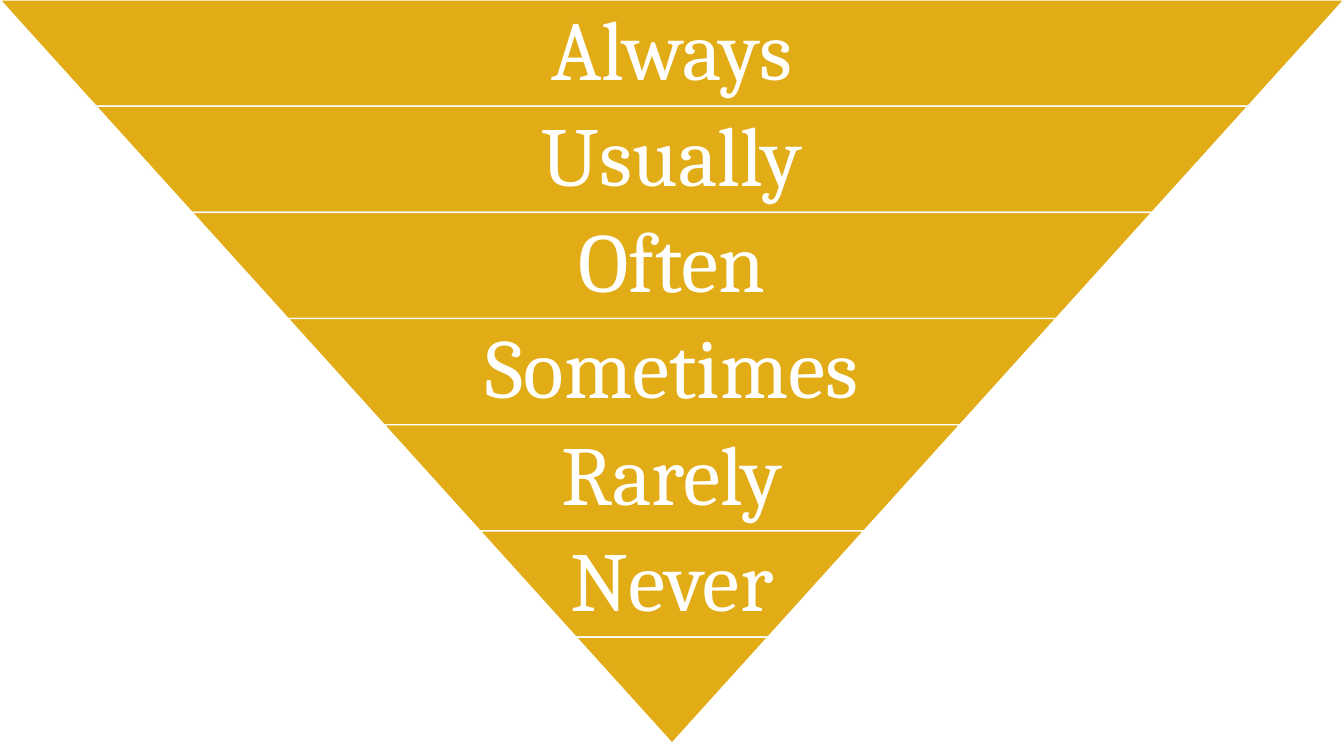
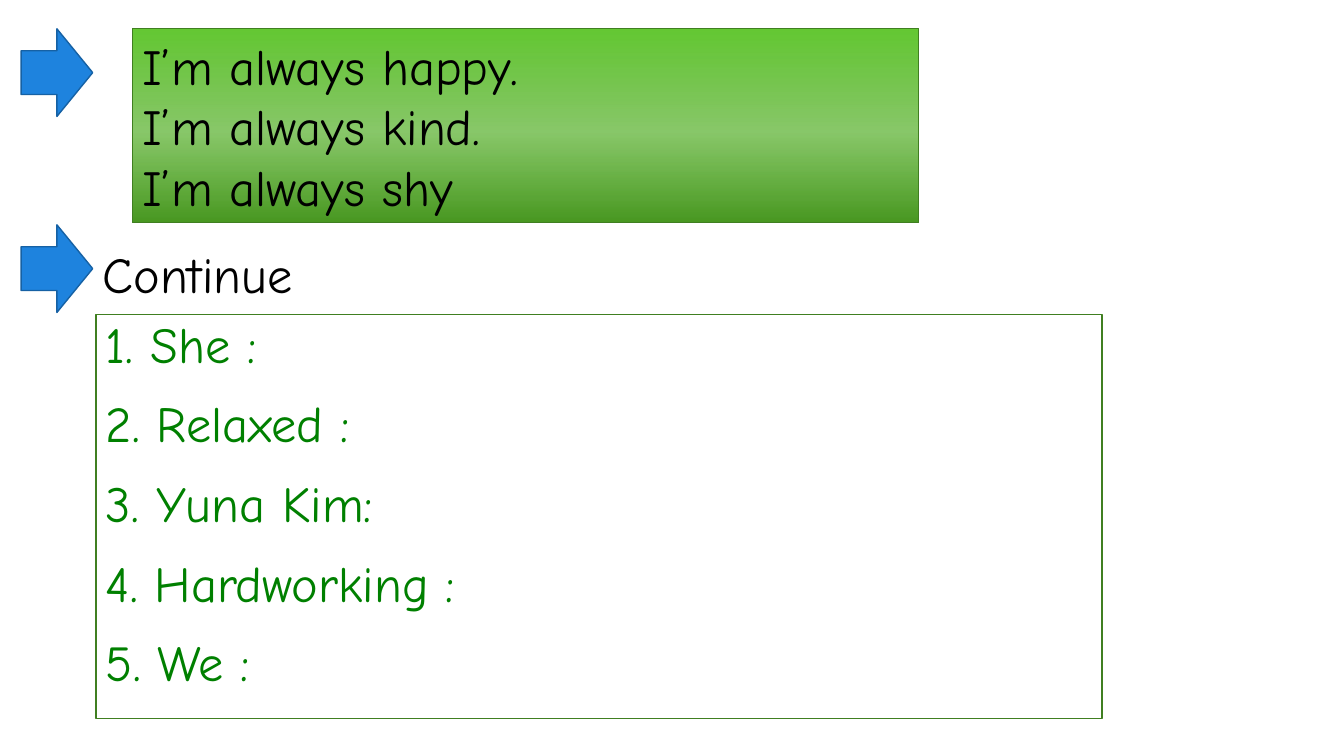
from dataclasses import dataclass

from lxml import etree
from pptx import Presentation
from pptx.dml.color import RGBColor
from pptx.enum.shapes import MSO_SHAPE as Preset
from pptx.enum.text import MSO_ANCHOR as Anchor, PP_ALIGN as Align
from pptx.oxml import parse_xml
from pptx.oxml.ns import nsdecls, qn
from pptx.shapes.autoshape import Shape
from pptx.slide import Slide
from pptx.util import Pt

COLORS = {
    "gold": "E1AC16",
    "white": "FFFFFF",
    "black": "000000",
    "blue": "1E83DE",
    "blue edge": "1661A4",
    "green text": "008000",
    "green edge": "407F21",
    "green top": "64C833",
    "green middle": "57B02B",
    "green bottom": "489721",
}
SLIDE_WIDTH, SLIDE_HEIGHT = 960, 540

# Frequency funnel
ADVERBS = ["Always", "Usually", "Often", "Sometimes", "Rarely", "Never", ""]
BAND_HEIGHT = 75.84
BAND_STEP = SLIDE_WIDTH / (2 * len(ADVERBS))
LABEL_SHARE = 0.65

# Exercise
EXAMPLES = ["I’m always happy.", "I’m always kind.", "I’m always shy"]
PROMPTS = ["1. She :", "2. Relaxed :", "3. Yuna Kim:", "4. Hardworking :", "5. We :"]
ARROW_TOPS = [20.6, 160.6]


@dataclass(frozen=True)
class Area:
    left: float
    top: float
    width: float
    height: float

    def lengths(self) -> tuple[Pt, Pt, Pt, Pt]:
        return Pt(self.left), Pt(self.top), Pt(self.width), Pt(self.height)


@dataclass(frozen=True)
class TextStyle:
    font: str
    size: float
    color: str
    align: Align = Align.LEFT
    anchor: Anchor = Anchor.TOP
    line_spacing: float = 1.0
    space_before: float = 0


FUNNEL_STYLE = TextStyle("Cambria", 60, "white", Align.CENTER, Anchor.MIDDLE, 0.9)
EXAMPLE_STYLE = TextStyle("Comic Neue", 36, "black", anchor=Anchor.MIDDLE)
HEADING_STYLE = TextStyle("Comic Neue", 36, "black", line_spacing=1.1)
PROMPT_STYLE = TextStyle("Comic Neue", 36, "green text", line_spacing=0.9, space_before=18)


def rgb(name: str) -> RGBColor:
    return RGBColor.from_string(COLORS[name])


def write(box: Shape, lines: list[str], style: TextStyle) -> None:
    frame = box.text_frame
    frame.word_wrap = True
    frame.vertical_anchor = style.anchor
    for index, line in enumerate(lines):
        para = frame.add_paragraph() if index else frame.paragraphs[0]
        para.alignment = style.align
        para.line_spacing = style.line_spacing
        para.space_before = Pt(style.space_before)
        span = para.add_run()
        span.text = line
        span.font.name = style.font
        span.font.size = Pt(style.size)
        span.font.color.rgb = rgb(style.color)


def add_preset(page: Slide, preset: Preset, area: Area, fill: str, edge: str,
               edge_width: float = 1) -> Shape:
    shape = page.shapes.add_shape(preset, *area.lengths())
    shape.shadow.inherit = False
    shape.fill.solid()
    shape.fill.fore_color.rgb = rgb(fill)
    shape.line.color.rgb = rgb(edge)
    shape.line.width = Pt(edge_width)
    return shape


def add_text(page: Slide, area: Area, lines: list[str], style: TextStyle) -> Shape:
    box = page.shapes.add_textbox(*area.lengths())
    write(box, lines, style)
    return box


def shade_downward(shape: Shape, stops: list[tuple[int, str, int]]) -> None:
    """Fill from top to bottom; each stop is position, colour and opacity in percent."""
    marks = "".join(
        f'<a:gs pos="{position * 1000}"><a:srgbClr val="{COLORS[color]}">'
        f'<a:alpha val="{opacity * 1000}"/></a:srgbClr></a:gs>'
        for position, color, opacity in stops
    )
    gradient: etree.ElementBase = parse_xml(
        f'<a:gradFill {nsdecls("a")} rotWithShape="1"><a:gsLst>{marks}</a:gsLst>'
        '<a:lin ang="5400000" scaled="0"/></a:gradFill>'
    )
    properties = shape.element.spPr
    properties.replace(properties.find(qn("a:solidFill")), gradient)


def draw_funnel(page: Slide) -> None:
    for level, adverb in enumerate(ADVERBS):
        inset = level * BAND_STEP
        width = SLIDE_WIDTH - 2 * inset
        area = Area(inset, level * BAND_HEIGHT, width, BAND_HEIGHT)
        band = add_preset(page, Preset.TRAPEZOID, area, "gold", "white")
        band.rotation = 180
        band.adjustments[0] = BAND_STEP / BAND_HEIGHT
        if adverb:
            label_width = width * LABEL_SHARE
            label_area = Area((SLIDE_WIDTH - label_width) / 2, area.top,
                              label_width, BAND_HEIGHT)
            label = add_text(page, label_area, [adverb], FUNNEL_STYLE)
            frame = label.text_frame
            frame.margin_left = frame.margin_right = Pt(6)
            frame.margin_top = frame.margin_bottom = Pt(6)


def draw_exercise(page: Slide) -> None:
    # Prompts to complete
    prompts = add_preset(page, Preset.RECTANGLE, Area(68.6, 224.8, 718.6, 288.6),
                         "white", "green edge")
    write(prompts, PROMPTS, PROMPT_STYLE)

    # Example sentences
    examples = add_preset(page, Preset.RECTANGLE, Area(94.4, 20.6, 561.6, 138.4),
                          "green top", "green edge", 0.5)
    shade_downward(examples, [(0, "green top", 100), (53, "green middle", 70),
                              (100, "green bottom", 100)])
    write(examples, EXAMPLES, EXAMPLE_STYLE)

    # Heading and arrows
    add_text(page, Area(66.2, 165.6, 311.8, 52.6), ["Continue"], HEADING_STYLE)
    for top in ARROW_TOPS:
        add_preset(page, Preset.RIGHT_ARROW, Area(15.1, top, 51.1, 62.6),
                   "blue", "blue edge")


def main() -> None:
    deck = Presentation()
    deck.slide_width, deck.slide_height = Pt(SLIDE_WIDTH), Pt(SLIDE_HEIGHT)
    blank = deck.slide_layouts[6]
    for draw in (draw_funnel, draw_exercise):
        draw(deck.slides.add_slide(blank))
    deck.save("out.pptx")


if __name__ == "__main__":
    main()
